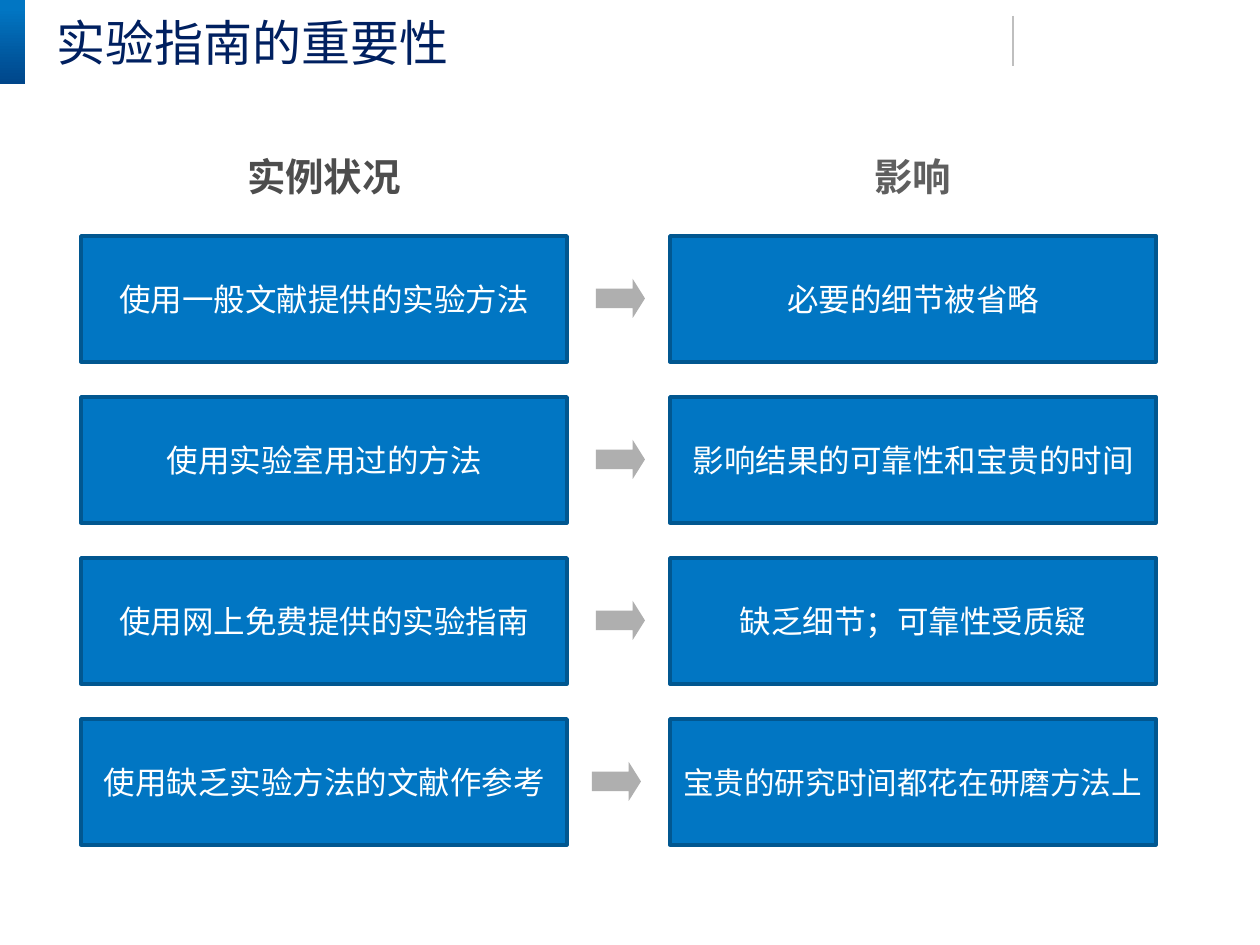
import pptx
import pptx.util
from pptx.dml.color import RGBColor
from pptx.enum.lang import MSO_LANGUAGE_ID
from pptx.enum.shapes import MSO_CONNECTOR, MSO_SHAPE
from pptx.enum.text import MSO_ANCHOR, MSO_AUTO_SIZE, PP_ALIGN
from pptx.oxml.ns import qn
import lxml.etree

EMU_PER_PX = 914400 / 126
FONT = "DejaVu Sans Mono"
COLORS = {
    "blue": "0176C3",
    "blue_edge": "015790",
    "blue_deep": "00468A",
    "navy": "002060",
    "heading_left": "4D4D4D",
    "heading_right": "5F5F5F",
    "arrow": "AFAFAF",
    "rule": "BFBFBF",
    "white": "FFFFFF",
}


def px(*lengths):
    return [pptx.util.Emu(round(length * EMU_PER_PX)) for length in lengths]


def color(name):
    return RGBColor.from_string(COLORS[name])


def write(shape, text, size, ink, bold=False, align=PP_ALIGN.CENTER,
          anchor=MSO_ANCHOR.MIDDLE, spacing=None):
    frame = shape.text_frame
    frame.word_wrap = True
    frame.vertical_anchor = anchor
    para = frame.paragraphs[0]
    para.alignment = align
    para.line_spacing = spacing
    span = para.add_run()
    span.text = text
    span.font.name = FONT
    span.font.size = pptx.util.Pt(size)
    span.font.bold = bold
    span.font.color.rgb = color(ink)
    span.font.language_id = MSO_LANGUAGE_ID.SIMPLIFIED_CHINESE


class Painter:
    def __init__(self, page):
        self.page = page

    def shape(self, kind, left, top, width, height, fill=None, edge=None):
        shape = self.page.shapes.add_shape(kind, *px(left, top, width, height))
        shape.shadow.inherit = False
        if fill:
            shape.fill.solid()
            shape.fill.fore_color.rgb = color(fill)
        if edge:
            shape.line.color.rgb = color(edge)
            shape.line.width = pptx.util.Pt(2)
        else:
            shape.line.fill.background()
        return shape

    def accent(self, left, top, width, height):
        """Draw the corner block, light at the top and dark at the bottom."""
        block = self.shape(MSO_SHAPE.ROUNDED_RECTANGLE, left, top, width, height)
        block.adjustments[0] = 0
        block.fill.gradient()
        block.fill.gradient_angle = 270
        stops = ((0.1, "blue"), (1, "blue_deep"))
        for stop, (position, name) in zip(block.fill.gradient_stops, stops):
            stop.position = position
            stop.color.rgb = color(name)

    def rule(self, x, top, bottom):
        line = self.page.shapes.add_connector(
            MSO_CONNECTOR.STRAIGHT, *px(x, top, x, bottom))
        line.line.color.rgb = color("rule")
        line.line.width = pptx.util.Pt(0.75)
        lxml.etree.SubElement(line._element.spPr, qn("a:effectLst"))

    def text(self, left, top, width, height, text, inset=True, **style):
        box = self.page.shapes.add_textbox(*px(left, top, width, height))
        frame = box.text_frame
        if not inset:
            frame.margin_left = frame.margin_right = 0
            frame.margin_top = frame.margin_bottom = 0
        write(box, text, **style)
        frame.auto_size = MSO_AUTO_SIZE.SHAPE_TO_FIT_TEXT

    def card(self, left, top, width, height, text, size):
        card = self.shape(MSO_SHAPE.RECTANGLE, left, top, width, height,
                          "blue", "blue_edge")
        write(card, text, size, "white")

    def arrow(self, left, top, width, height):
        arrow = self.shape(MSO_SHAPE.RIGHT_ARROW, left, top, width, height, "arrow")
        arrow.adjustments[0] = 0.5
        arrow.adjustments[1] = 0.314


def main():
    deck = pptx.Presentation()
    deck.slide_width, deck.slide_height = px(1260, 945)
    painter = Painter(deck.slides.add_slide(deck.slide_layouts[6]))

    painter.rule(1013, 16, 66)
    painter.accent(0, 0, 25, 84)
    painter.text(57, 19, 760, 53, "实验指南的重要性", inset=False, size=28,
                 ink="navy", align=PP_ALIGN.LEFT, anchor=MSO_ANCHOR.BOTTOM,
                 spacing=0.9)

    case_left, effect_left, card_width, card_height = 81, 670, 486, 126
    heading_width = 248
    headings = ((case_left, "实例状况", "heading_left"),
                (effect_left, "影响", "heading_right"))
    for left, heading, ink in headings:
        painter.text(left + (card_width - heading_width) // 2, 147,
                     heading_width, 59, heading, size=22, ink=ink, bold=True,
                     anchor=MSO_ANCHOR.TOP)

    # case, effect, effect text size, arrow left
    rows = (
        ("使用一般文献提供的实验方法", "必要的细节被省略", 18, 596),
        ("使用实验室用过的方法", "影响结果的可靠性和宝贵的时间", 18, 596),
        ("使用网上免费提供的实验指南", "缺乏细节；可靠性受质疑", 18, 596),
        ("使用缺乏实验方法的文献作参考", "宝贵的研究时间都花在研磨方法上", 17.5, 592),
    )
    first_top, pitch, arrow_height = 236, 161, 39
    for index, (case, effect, effect_size, arrow_left) in enumerate(rows):
        top = first_top + index * pitch
        painter.card(case_left, top, card_width, card_height, case, 18)
        painter.arrow(arrow_left, top + (card_height - arrow_height) // 2,
                      49, arrow_height)
        painter.card(effect_left, top, card_width, card_height, effect, effect_size)

    deck.save("out.pptx")


if __name__ == "__main__":
    main()
